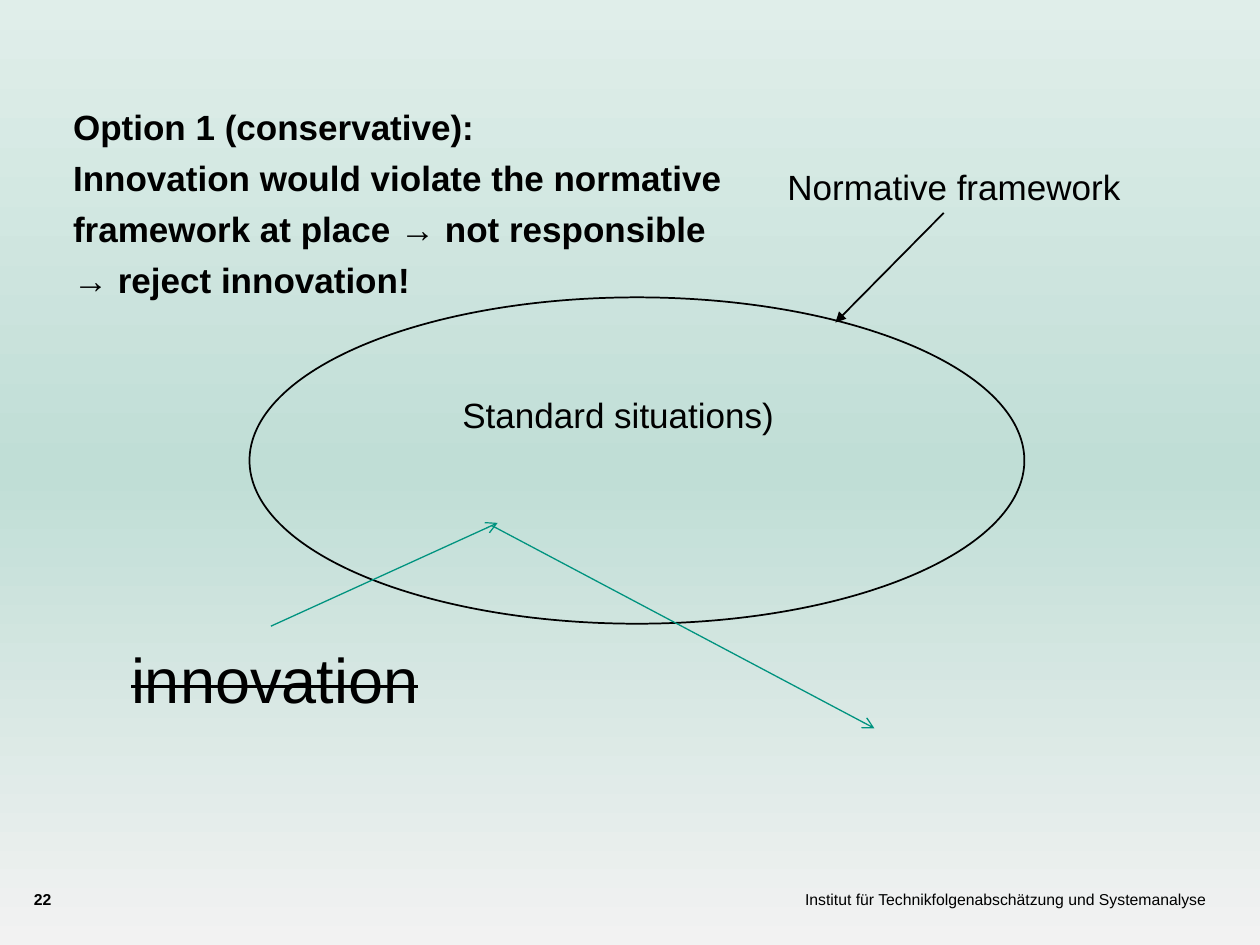
from copy import deepcopy

from lxml.etree import SubElement
from pptx import Presentation
from pptx.dml.color import RGBColor
from pptx.enum.shapes import MSO_CONNECTOR, MSO_SHAPE
from pptx.enum.text import MSO_ANCHOR, MSO_AUTO_SIZE, PP_ALIGN
from pptx.oxml.ns import qn
from pptx.util import Inches, Pt

BLACK = "000000"
GREEN = "00937F"


def color(hex_string):
    return RGBColor.from_string(hex_string)


class SlideBuilder:
    font_name = "Arial"
    inset = (0.08, 0.04)

    def __init__(self, slide):
        self.slide = slide

    def background(self, stops):
        """Vertical gradient running from bottom to top."""
        fill = self.slide.background.fill
        fill.gradient()
        fill.gradient_angle = 90
        first = fill.gradient_stops[0]._gs
        while len(fill.gradient_stops) < len(stops):
            first.addnext(deepcopy(first))
        for stop, (position, hex_string) in zip(fill.gradient_stops, stops):
            stop.position = position
            stop.color.rgb = color(hex_string)

    def frame(self, shape, inset):
        text_frame = shape.text_frame
        text_frame.word_wrap = True
        text_frame.auto_size = MSO_AUTO_SIZE.NONE
        text_frame.vertical_anchor = MSO_ANCHOR.TOP
        text_frame.margin_left = text_frame.margin_right = Inches(inset[0])
        text_frame.margin_top = text_frame.margin_bottom = Inches(inset[1])
        return text_frame

    def format_font(self, paragraph, size, bold=False):
        for run in paragraph.runs:
            run.font.name = self.font_name
            run.font.size = Pt(size)
            run.font.bold = bold
            run.font.color.rgb = color(BLACK)

    def body(self, left, top, width, height, lines, size):
        shape = self.slide.placeholders[1]
        shape.left, shape.top = Inches(left), Inches(top)
        shape.width, shape.height = Inches(width), Inches(height)
        text_frame = self.frame(shape, self.inset)
        text_frame.text = "\n".join(lines)
        for index, paragraph in enumerate(text_frame.paragraphs):
            properties = paragraph._p.get_or_add_pPr()
            properties.set("marL", str(Inches(0.38)))
            properties.set("indent", str(-Inches(0.38)))
            SubElement(properties, qn("a:buNone"))
            paragraph.space_before = Pt(5 if index else 0)
            self.format_font(paragraph, size, bold=True)

    def text(self, left, top, width, height, words, size, bold=False,
             align=PP_ALIGN.LEFT, inset=inset, strike=False):
        shape = self.slide.shapes.add_textbox(
            Inches(left), Inches(top), Inches(width), Inches(height))
        text_frame = self.frame(shape, inset)
        text_frame.text = words
        paragraph = text_frame.paragraphs[0]
        paragraph.alignment = align
        self.format_font(paragraph, size, bold)
        if strike:
            paragraph.runs[0].font._element.set("strike", "sngStrike")

    def ellipse(self, left, top, width, height):
        shape = self.slide.shapes.add_shape(
            MSO_SHAPE.OVAL, Inches(left), Inches(top), Inches(width), Inches(height))
        shape.shadow.inherit = False
        shape.fill.background()
        shape.line.color.rgb = color(BLACK)
        shape.line.width = Pt(1)

    def arrow(self, start, end, hex_string, width, head):
        connector = self.slide.shapes.add_connector(
            MSO_CONNECTOR.STRAIGHT, *map(Inches, start + end))
        connector.line.color.rgb = color(hex_string)
        connector.line.width = Pt(width)
        SubElement(connector.line._get_or_add_ln(), qn("a:tailEnd"), type=head)
        SubElement(connector._element.spPr, qn("a:effectLst"))


def main():
    presentation = Presentation()
    presentation.slide_width = Inches(10)
    presentation.slide_height = Inches(7.5)
    slide = presentation.slides.add_slide(presentation.slide_layouts[1])
    title = slide.shapes.title._element
    title.getparent().remove(title)
    builder = SlideBuilder(slide)
    builder.background([(0, "F2F2F2"), (0.5, "C0DED6"), (1, "E0EEEA")])

    # Footer
    builder.text(5.94, 7.06, 3.63, 0.39,
                 "Institut für Technikfolgenabschätzung und Systemanalyse",
                 9, align=PP_ALIGN.RIGHT, inset=(0, 0))
    builder.text(0.27, 7.06, 0.36, 0.24, "22", 9, bold=True, inset=(0, 0))

    # Option described in the body
    builder.body(0.5, 0.8, 9, 6.24, [
        "Option 1 (conservative):",
        "Innovation would violate the normative",
        "framework at place → not responsible",
        "→ reject innovation!",
    ], 20)

    # Normative framework and its labels
    builder.ellipse(1.98, 2.36, 6.15, 2.59)
    builder.text(3.59, 3.08, 3.4, 0.42, "Standard situations)", 20)
    builder.text(0.96, 5.04, 2.82, 0.69, "innovation", 36, strike=True)
    builder.text(6.17, 1.27, 3.24, 0.42, "Normative framework", 20)

    # Pointer to the framework, then the path of the rejected innovation
    builder.arrow((7.49, 1.69), (6.63, 2.56), BLACK, 1, "triangle")
    builder.arrow((2.15, 4.97), (3.95, 4.15), GREEN, 0.75, "arrow")
    builder.arrow((3.9, 4.17), (6.94, 5.78), GREEN, 0.75, "arrow")

    presentation.save("out.pptx")


if __name__ == "__main__":
    main()
